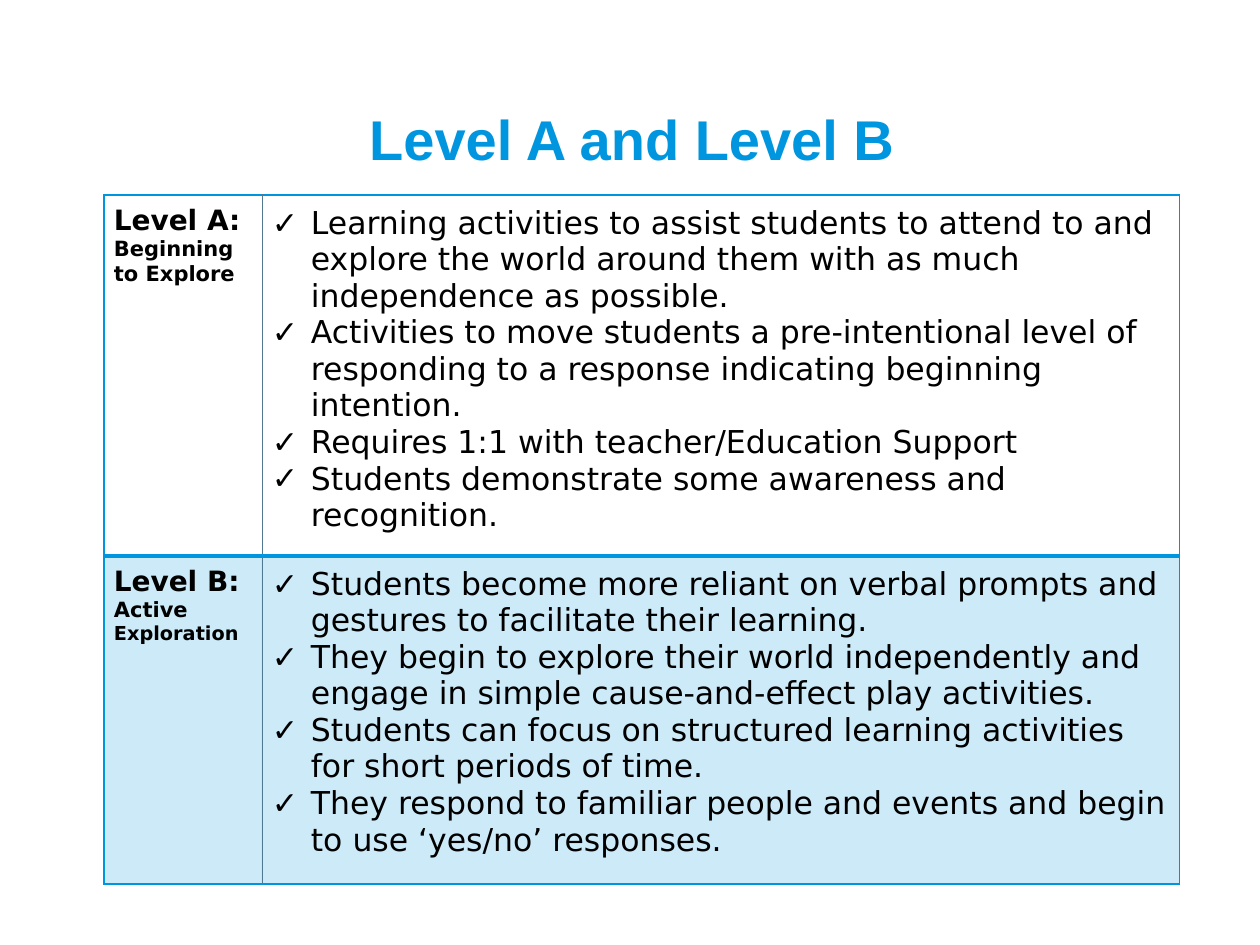
"""Build the slide comparing Level A and Level B."""
from lxml.etree import SubElement
from pptx import Presentation
from pptx.dml.color import RGBColor
from pptx.enum.text import MSO_ANCHOR, PP_ALIGN
from pptx.oxml.ns import qn
from pptx.util import Pt

PX = 7257
BLUE = RGBColor(0x00, 0x96, 0xDF)
GREY = RGBColor(0x50, 0x78, 0x90)
BLACK = RGBColor(0x00, 0x00, 0x00)
BODY_FONT = "DejaVu Sans"
TITLE_FONT = "Arial"
INSET = 10
INDENT = 39
COLUMN_WIDTHS = (158, 917)
ROW_HEIGHTS = (361, 328)
THIN, MEDIUM, THICK = 0.5, 1, 2

LEVELS = [
    (
        [("Level A: ", 16), ("Beginning to Explore", 12)],
        [
            "Learning activities to assist students to attend to and explore "
            "the world around them with as much independence as possible.",
            "Activities to move students a pre-intentional level of responding "
            "to a response indicating beginning intention.",
            "Requires 1:1 with teacher/Education Support",
            "Students demonstrate some awareness and recognition.",
        ],
    ),
    (
        [("Level B: ", 16), ("Active ", 12), ("Exploration", 11)],
        [
            "Students become more reliant on verbal prompts and gestures to "
            "facilitate their learning.",
            "They begin to explore their world independently and engage in "
            "simple cause-and-effect play activities.",
            "Students can focus on structured learning activities for short "
            "periods of time.",
            "They respond to familiar people and events and begin to use "
            "‘yes/no’ responses.",
        ],
    ),
]


def px(length):
    return length * PX


def add_span(para, text, size, color=BLACK, bold=False, font=BODY_FONT):
    span = para.add_run()
    span.text = text
    span.font.size = Pt(size)
    span.font.name = font
    span.font.bold = bold
    span.font.color.rgb = color


def set_title(page, text):
    title = page.shapes.title
    title.left, title.top, title.width, title.height = map(px, (250, 98, 764, 81))
    frame = title.text_frame
    frame.word_wrap = True
    frame.vertical_anchor = MSO_ANCHOR.MIDDLE
    para = frame.paragraphs[0]
    para.alignment = PP_ALIGN.CENTER
    add_span(para, text, 32, BLUE, True, TITLE_FONT)


def set_check_bullet(para):
    properties = para._p.get_or_add_pPr()
    properties.set("marL", str(px(INDENT)))
    properties.set("indent", str(-px(INDENT)))
    SubElement(properties, qn("a:buFont"), typeface=BODY_FONT)
    SubElement(properties, qn("a:buChar"), char="✓")


def set_border(cell, side, color, width):
    properties = cell._tc.get_or_add_tcPr()
    line = SubElement(properties, qn(f"a:ln{side}"), w=str(Pt(width)))
    fill = SubElement(line, qn("a:solidFill"))
    SubElement(fill, qn("a:srgbClr"), val=str(color))


def format_cell(cell, borders, tinted):
    cell.margin_left = cell.margin_right = px(INSET)
    cell.margin_top = cell.margin_bottom = px(INSET)
    cell.vertical_anchor = MSO_ANCHOR.TOP
    for side, (color, width) in borders.items():
        set_border(cell, side, color, width)
    if tinted:
        cell.fill.solid()
        cell.fill.fore_color.rgb = BLUE
        tint = cell._tc.tcPr.find(f"{qn('a:solidFill')}/{qn('a:srgbClr')}")
        SubElement(tint, qn("a:alpha"), val="20000")
    else:
        cell.fill.background()


def fill_heading(cell, parts):
    para = cell.text_frame.paragraphs[0]
    for text, size in parts:
        add_span(para, text, size, bold=True)


def fill_bullets(cell, items):
    frame = cell.text_frame
    for index, item in enumerate(items):
        para = frame.add_paragraph() if index else frame.paragraphs[0]
        set_check_bullet(para)
        add_span(para, item, 18)


def add_level_table(page):
    frame = page.shapes.add_table(
        len(LEVELS), len(COLUMN_WIDTHS), px(104), px(195),
        px(sum(COLUMN_WIDTHS)), px(sum(ROW_HEIGHTS)),
    )
    table = frame.table
    table.first_row = table.horz_banding = False
    for column, width in zip(table.columns, COLUMN_WIDTHS):
        column.width = px(width)
    for row, height in zip(table.rows, ROW_HEIGHTS):
        row.height = px(height)
    for index, (heading, items) in enumerate(LEVELS):
        edges = {
            "T": (BLUE, THICK if index else MEDIUM),
            "B": (BLUE, MEDIUM if index else THICK),
        }
        left, right = table.cell(index, 0), table.cell(index, 1)
        inner = (GREY, THIN)
        format_cell(left, {"L": (BLUE, MEDIUM), "R": inner, **edges}, index == 1)
        format_cell(right, {"L": inner, "R": inner, **edges}, index == 1)
        fill_heading(left, heading)
        fill_bullets(right, items)


def main():
    deck = Presentation()
    deck.slide_width, deck.slide_height = px(1260), px(945)
    page = deck.slides.add_slide(deck.slide_layouts[5])
    add_level_table(page)
    set_title(page, "Level A and Level B")
    deck.save("out.pptx")


if __name__ == "__main__":
    main()
